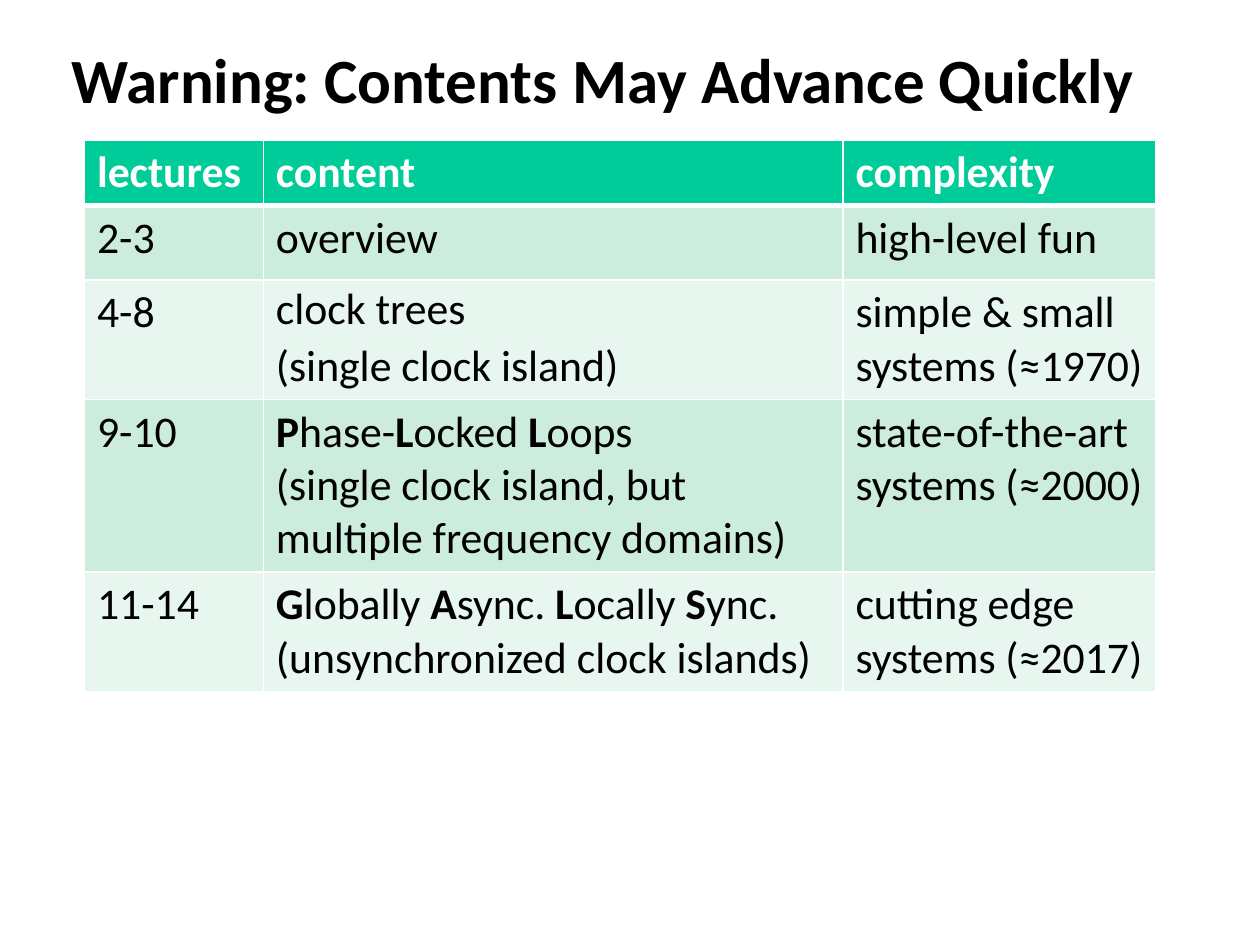
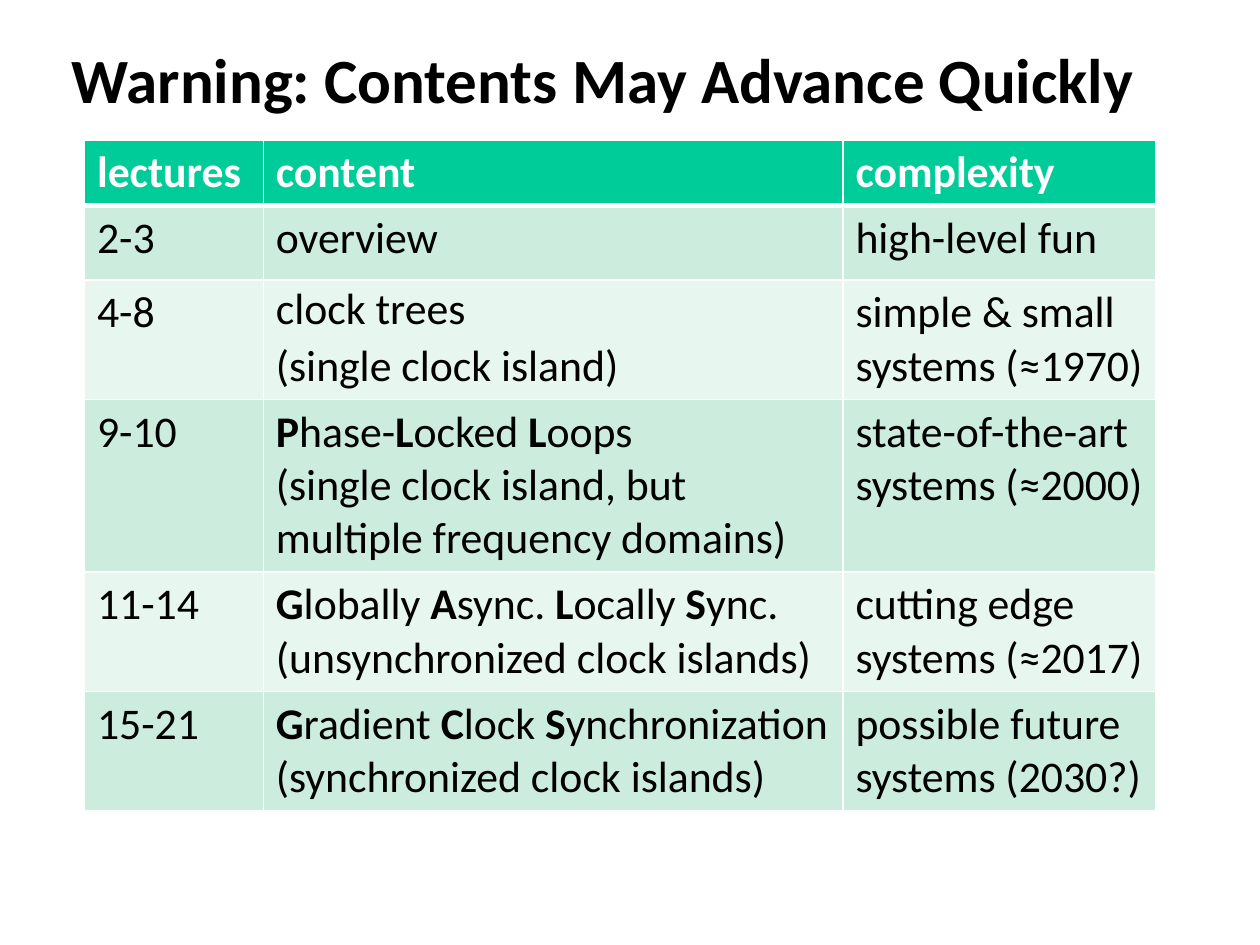
from lxml import etree
from pptx import Presentation
from pptx import util as u
from pptx.dml.color import RGBColor
from pptx.enum import text
from pptx.oxml.ns import qn

FONT = "Calibri"
COLORS = {"ink": "000000", "paper": "FFFFFF", "header": "00CC99",
          "odd_row": "CCECDE", "even_row": "E7F6EF"}
TITLE = "Warning: Contents May Advance Quickly"
TITLE_BOX = (0.47, 0.25, 9.19, 0.75)
TABLE_CORNER = (0.67, 1.11)
COLUMN_WIDTHS = (1.42, 4.6, 2.48)
CELL_SIZE = 25
HANGING_CELL = (2, 1)

# Each row: height, then its cells; "\n" starts a paragraph, *...* is bold.
ROWS = [
    (0.51, "*lectures*", "*content*", "*complexity*"),
    (0.59, "2-3", "overview", "high-level fun"),
    (0.94, "4-8", "clock trees\n(single clock island)",
     "simple & small\nsystems (≈1970)"),
    (1.37, "9-10",
     "*P*hase-*L*ocked *L*oops\n"
     "(single clock island, but multiple frequency domains)",
     "state-of-the-art\nsystems (≈2000)"),
    (0.94, "11-14",
     "*G*lobally *A*sync. *L*ocally *S*ync.\n(unsynchronized clock islands)",
     "cutting edge systems (≈2017)"),
    (0.94, "15-21",
     "*G*radient *C*lock *S*ynchronization\n(synchronized clock islands)",
     "possible future\nsystems (2030?)"),
]


def color(name):
    return RGBColor.from_string(COLORS[name])


def add_run(para, words, size, ink, bold):
    span = para.add_run()
    span.text = words
    span.font.name = FONT
    span.font.size = u.Pt(size)
    span.font.bold = bold
    span.font.color.rgb = color(ink)


def add_title(slide, box):
    title = slide.shapes.title
    title.left, title.top, title.width, title.height = map(u.Inches, box)
    frame = title.text_frame
    frame.auto_size = text.MSO_AUTO_SIZE.NONE
    frame.vertical_anchor = text.MSO_ANCHOR.MIDDLE
    para = frame.paragraphs[0]
    para.alignment = text.PP_ALIGN.LEFT
    add_run(para, TITLE, 36, "ink", True)


def set_borders(cell, widths):
    """Draw the cell's left, right, top and bottom lines, widths in points."""
    properties = cell._tc.get_or_add_tcPr()
    for side, width in zip("LRTB", widths):
        line = etree.SubElement(properties, qn(f"a:ln{side}"), w=str(u.Pt(width)))
        fill = etree.SubElement(line, qn("a:solidFill"))
        etree.SubElement(fill, qn("a:srgbClr"), val=COLORS["paper"])


def hang(para):
    """Give a paragraph the tighter, hanging style of an outline item."""
    para.line_spacing = 0.9
    para.space_before = u.Pt(5)
    properties = para._p.get_or_add_pPr()
    properties.set("marL", str(u.Inches(0.56)))
    properties.set("indent", str(-u.Inches(0.56)))


def fill_cell(cell, content, row, hanging):
    ink = "ink" if row else "paper"
    set_borders(cell, (1, 1, 3 if row == 1 else 1, 1 if row else 3))
    cell.fill.solid()
    band = "odd_row" if row % 2 else "even_row"
    cell.fill.fore_color.rgb = color(band if row else "header")
    frame = cell.text_frame
    for index, line in enumerate(content.split("\n")):
        para = frame.add_paragraph() if index else frame.paragraphs[0]
        if hanging:
            hang(para)
        for part, words in enumerate(line.split("*")):
            if words:
                add_run(para, words, CELL_SIZE, ink, part % 2 == 1)


def add_schedule(slide, corner, rows):
    left, top = corner
    height = sum(row[0] for row in rows)
    table = slide.shapes.add_table(
        len(rows), len(COLUMN_WIDTHS), u.Inches(left), u.Inches(top),
        u.Inches(sum(COLUMN_WIDTHS)), u.Inches(height)).table
    for column, width in zip(table.columns, COLUMN_WIDTHS):
        column.width = u.Inches(width)
    for r, (row_height, *contents) in enumerate(rows):
        table.rows[r].height = u.Inches(row_height)
        for c, content in enumerate(contents):
            fill_cell(table.cell(r, c), content, r, (r, c) == HANGING_CELL)


def add_schedule_slide(deck, rows):
    slide = deck.slides.add_slide(deck.slide_layouts.get_by_name("Title Only"))
    add_title(slide, TITLE_BOX)
    add_schedule(slide, TABLE_CORNER, rows)


def main():
    deck = Presentation()
    deck.slide_width, deck.slide_height = u.Inches(10), u.Inches(7.5)
    for rows in (ROWS[:-1], ROWS):
        add_schedule_slide(deck, rows)
    deck.save("out.pptx")


if __name__ == "__main__":
    main()
